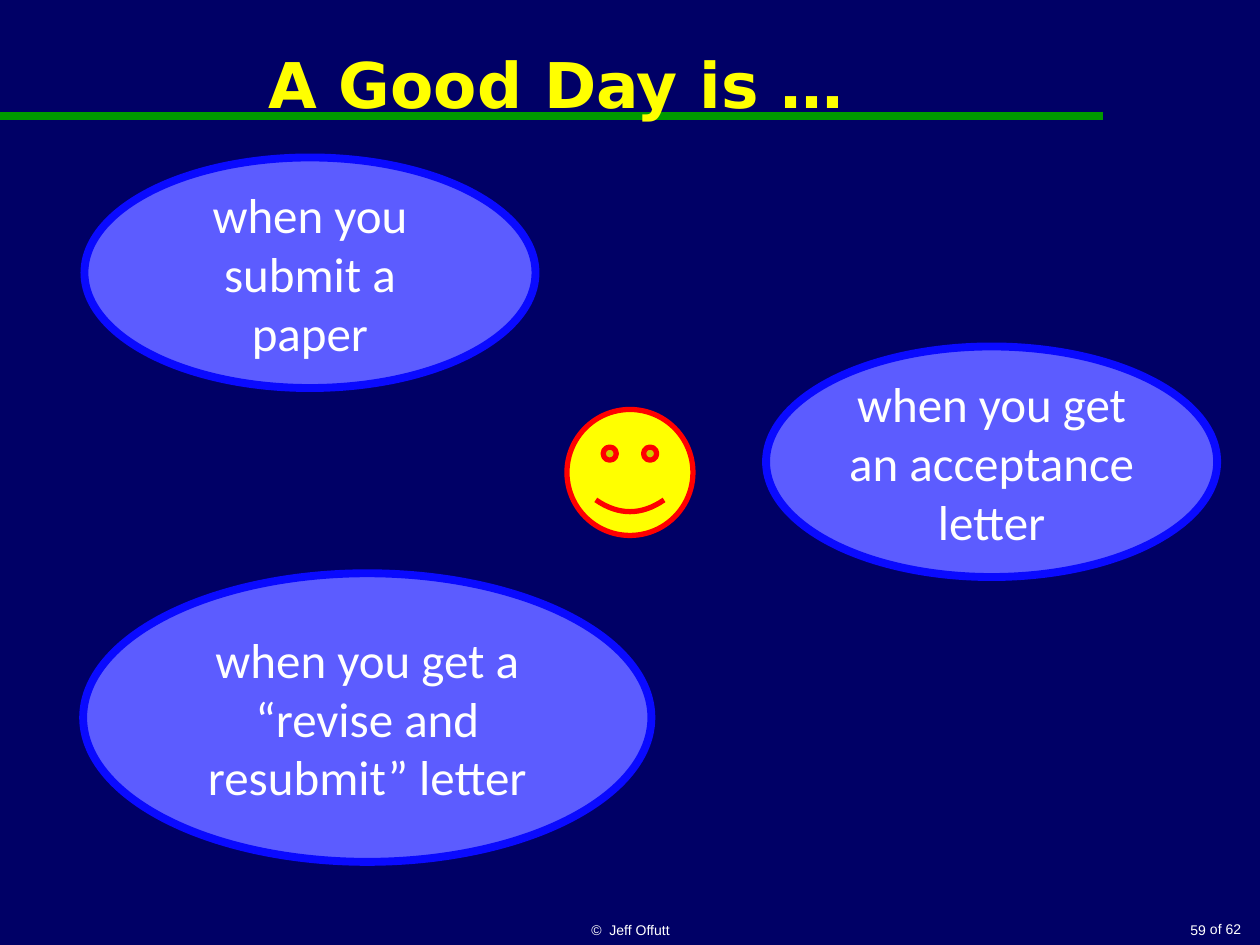
"""Build the slide on what makes a good day."""
from dataclasses import dataclass

from lxml import etree
from pptx import Presentation
from pptx import util as u
from pptx.dml.color import RGBColor
from pptx.enum import shapes, text
from pptx.oxml import ns


@dataclass(frozen=True)
class Theme:
    """Hold the colours, fonts and type sizes."""
    back: str = "000066"
    rule: str = "009900"
    title: str = "FFFF00"
    ink: str = "FFFFFF"
    fill: str = "5C5CFF"
    edge: str = "0A0AFF"
    face: str = "FFFF00"
    mark: str = "FF0000"
    head: str = "DejaVu Sans"
    body: str = "Calibri"
    foot: str = "Arial"
    big: int = 36
    mid: int = 28
    small: int = 8
    thick: float = 4.5
    thin: int = 3


T = Theme()
MID, END = text.MSO_ANCHOR.MIDDLE, text.MSO_ANCHOR.BOTTOM
CENTER, RIGHT = text.PP_ALIGN.CENTER, text.PP_ALIGN.RIGHT


def paint(part, hue):
    """Give a fill a solid colour."""
    part.solid()
    part.fore_color.rgb = RGBColor.from_string(hue)


def write(frame, words, font, size, hue, align, anchor, bold=False, wrap=True):
    """Set one paragraph of text in a frame."""
    frame.word_wrap = wrap
    frame.vertical_anchor = anchor
    para = frame.paragraphs[0]
    para.text = words
    para.alignment = align
    para.font.name = font
    para.font.size = u.Pt(size)
    para.font.bold = bold
    para.font.color.rgb = RGBColor.from_string(hue)


def add_text(slide, box, *style, **more):
    """Add a text box."""
    label = slide.shapes.add_textbox(*map(u.Inches, box))
    write(label.text_frame, *style, **more)


def add_form(slide, kind, box, fill, edge, width):
    """Add an outlined preset shape."""
    form = slide.shapes.add_shape(kind, *map(u.Inches, box))
    form.shadow.inherit = False
    paint(form.fill, fill)
    paint(form.line.fill, edge)
    form.line.width = u.Pt(width)
    return form


def add_bubble(slide, box, words):
    """Add an ellipse with a reason in it."""
    form = add_form(slide, shapes.MSO_SHAPE.OVAL, box, T.fill, T.edge, T.thick)
    write(form.text_frame, words, T.body, T.mid, T.ink, CENTER, MID)


def add_rule(slide, width, top):
    """Add the line under the title."""
    rule = slide.shapes.add_connector(
        shapes.MSO_CONNECTOR.STRAIGHT,
        0, u.Inches(top), u.Inches(width), u.Inches(top))
    paint(rule.line.fill, T.rule)
    rule.line.width = u.Pt(T.thick)
    etree.SubElement(rule._element.spPr, ns.qn("a:effectLst"))


def main():
    """Build and save the slide."""
    deck = Presentation()
    deck.slide_width, deck.slide_height = u.Inches(10), u.Inches(7.5)
    slide = deck.slides.add_slide(deck.slide_layouts[6])
    paint(slide.background.fill, T.back)

    add_rule(slide, 8.75, 0.92)
    add_text(slide, (0.08, 0, 8.67, 1.33), "A Good Day is …",
             T.head, T.big, T.title, CENTER, MID, bold=True)

    small = (T.foot, T.small, T.ink)
    add_text(slide, (3.42, 7.17, 3.17, 0.33), "©  Jeff Offutt",
             *small, CENTER, END)
    add_text(slide, (7.92, 7.17, 1.75, 0.33), "59", *small, RIGHT, END)
    add_text(slide, (9.5, 7.26, 0.45, 0.24), "of 62",
             *small, RIGHT, text.MSO_ANCHOR.TOP, wrap=False)

    add_form(slide, shapes.MSO_SHAPE.SMILEY_FACE, (4.5, 3.25, 1, 1),
             T.face, T.mark, T.thin)
    for box, words in (
        ((0.67, 1.25, 3.58, 1.83), "when you submit a paper"),
        ((6.08, 2.75, 3.58, 1.83), "when you get an acceptance letter"),
        ((0.66, 4.55, 4.51, 2.29),
         "when you get a “revise and resubmit” letter"),
    ):
        add_bubble(slide, box, words)
    deck.save("out.pptx")


if __name__ == "__main__":
    main()
